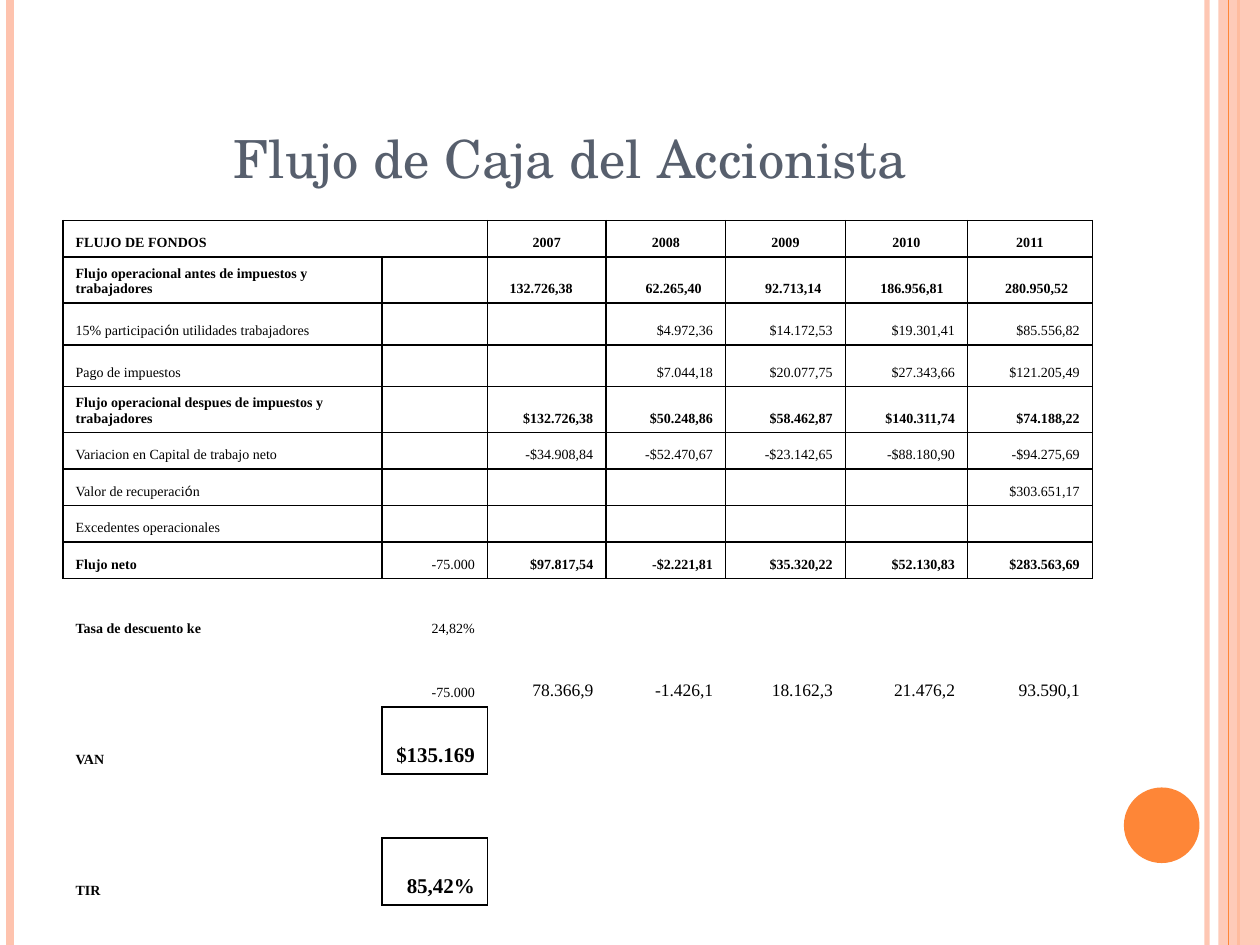
"""Build the shareholder cash flow slide with its table and side decoration."""
from dataclasses import dataclass

from lxml import etree
from pptx import Presentation
from pptx.dml.color import RGBColor
from pptx.enum.shapes import MSO_CONNECTOR, MSO_SHAPE
from pptx.enum.text import MSO_ANCHOR, PP_ALIGN
from pptx.oxml.ns import qn
from pptx.util import Inches, Pt

STRAIGHT = MSO_CONNECTOR.STRAIGHT
RECTANGLE, OVAL = MSO_SHAPE.RECTANGLE, MSO_SHAPE.OVAL
BOTTOM = MSO_ANCHOR.BOTTOM
LEFT, CENTER, RIGHT = PP_ALIGN.LEFT, PP_ALIGN.CENTER, PP_ALIGN.RIGHT

PEACH = RGBColor(0xFE, 0xC3, 0xAE)
ORANGE = RGBColor(0xFE, 0x86, 0x37)
SLATE = RGBColor(0x57, 0x5F, 0x6D)
BLACK = RGBColor(0, 0, 0)
TITLE_FONT, TABLE_FONT, ACCENT_FONT = "TeX Gyre Schola", "Times New Roman", "Arial"

SLIDE_WIDTH, SLIDE_HEIGHT = 10, 7.5
CONTENT_LEFT, CONTENT_WIDTH = 0.05 * SLIDE_WIDTH, 0.817 * SLIDE_WIDTH
TABLE_TOP = 1.75
COLUMN_WIDTHS = (2.53, 0.84, 0.94, 0.95, 0.95, 0.97, 0.99)
LINE_ROW, WRAPPED_ROW, SPACED_ROW, RESULT_ROW = 0.29, 0.35, 0.51, 0.53
GRID_ROWS = 9
BORDER_SIDES = {"L": (0, -1), "R": (0, 1), "T": (-1, 0), "B": (1, 0)}


@dataclass(frozen=True)
class Rule:
    """A full-height vertical line."""
    x: float
    color: RGBColor
    width: float
    opacity: int = 100


@dataclass(frozen=True)
class Row:
    """A table row: label, initial value and yearly values."""
    height: float
    label: str = ""
    initial: str = ""
    years: tuple[str, ...] = ()
    bold: bool = False
    size: float = 8
    result: bool = False
    alignments: tuple = (RIGHT,) * 5
    inset: float = 0.1


BACK_RULES = (Rule(9.58, PEACH, 3, 93), Rule(0.08, PEACH, 4.5), Rule(9.83, ORANGE, 1.5))
FRONT_RULE = Rule(9.75, ORANGE, 0.75)

ROWS = (
    Row(LINE_ROW, "FLUJO DE FONDOS", years=("2007", "2008", "2009", "2010", "2011"),
        bold=True, alignments=(CENTER,) * 5),
    Row(WRAPPED_ROW, "Flujo operacional antes de impuestos y trabajadores",
        years=("132.726,38", "62.265,40", "92.713,14", "186.956,81", "280.950,52"),
        bold=True, alignments=(CENTER,) + (RIGHT,) * 4, inset=0.19),
    Row(0.33, "15% participación utilidades trabajadores",
        years=("", "$4.972,36", "$14.172,53", "$19.301,41", "$85.556,82")),
    Row(0.33, "Pago de impuestos",
        years=("", "$7.044,18", "$20.077,75", "$27.343,66", "$121.205,49")),
    Row(WRAPPED_ROW, "Flujo operacional despues de impuestos y trabajadores",
        years=("$132.726,38", "$50.248,86", "$58.462,87", "$140.311,74", "$74.188,22"), bold=True),
    Row(LINE_ROW, "Variacion en Capital de trabajo neto",
        years=("-$34.908,84", "-$52.470,67", "-$23.142,65", "-$88.180,90", "-$94.275,69")),
    Row(LINE_ROW, "Valor de recuperación", years=("", "", "", "", "$303.651,17")),
    Row(LINE_ROW, "Excedentes operacionales"),
    Row(LINE_ROW, "Flujo neto", "-75.000",
        ("$97.817,54", "-$2.221,81", "$35.320,22", "$52.130,83", "$283.563,69"), bold=True),
    Row(SPACED_ROW, "Tasa de descuento ke", "24,82%", bold=True),
    Row(SPACED_ROW, initial="-75.000",
        years=("78.366,9", "-1.426,1", "18.162,3", "21.476,2", "93.590,1"), size=10),
    Row(RESULT_ROW, "VAN", "$135.169", bold=True, result=True),
    Row(SPACED_ROW),
    Row(RESULT_ROW, "TIR", "85,42%", bold=True, result=True),
)


def set_opacity(properties, opacity: int) -> None:
    """Give the solid colour below the properties an opacity in percent."""
    color = next(properties.iter(qn("a:srgbClr")))
    etree.SubElement(color, qn("a:alpha"), val=str(opacity * 1000))


def add_rule(slide, rule: Rule) -> None:
    """Draw a vertical line over the height of the slide."""
    x = Inches(rule.x)
    connector = slide.shapes.add_connector(STRAIGHT, x, 0, x, Inches(SLIDE_HEIGHT))
    connector.line.color.rgb = rule.color
    connector.line.width = Pt(rule.width)
    if rule.opacity < 100:
        set_opacity(connector.line._ln, rule.opacity)
    etree.SubElement(connector._element.spPr, qn("a:effectLst"))


def add_plain_shape(slide, kind, box: tuple[float, ...], color: RGBColor):
    """Draw a filled shape without an outline."""
    shape = slide.shapes.add_shape(kind, *map(Inches, box))
    shape.shadow.inherit = False
    shape.fill.solid()
    shape.fill.fore_color.rgb = color
    shape.line.fill.background()
    return shape


def add_run(paragraph, text: str, size: float, bold: bool, font: str, color: RGBColor) -> None:
    """Append a formatted run."""
    run = paragraph.add_run()
    run.text = text
    run.font.size = Pt(size)
    run.font.bold = bold
    run.font.name = font
    run.font.color.rgb = color


def add_title(slide, text: str) -> None:
    """Add the title text box."""
    box = (CONTENT_LEFT, 0.04 * SLIDE_HEIGHT, CONTENT_WIDTH, SLIDE_HEIGHT / 6)
    frame = slide.shapes.add_textbox(*map(Inches, box)).text_frame
    frame.word_wrap = True
    frame.vertical_anchor = BOTTOM
    paragraph = frame.paragraphs[0]
    paragraph.alignment = CENTER
    add_run(paragraph, text, 30, False, TITLE_FONT, SLATE)


def is_boxed(row: int, column: int) -> bool:
    """Tell whether a cell has a border on its sides."""
    if not (0 <= row < len(ROWS) and 0 <= column < len(COLUMN_WIDTHS)):
        return False
    return row < GRID_ROWS or (ROWS[row].result and column == 1)


def set_borders(cell, row: int, column: int) -> None:
    """Draw the cell edges that touch a boxed cell, leaving the heading undivided."""
    properties = cell._tc.get_or_add_tcPr()
    for index, (side, (down, across)) in enumerate(BORDER_SIDES.items()):
        line = etree.Element(qn(f"a:ln{side}"), w=str(Pt(1)))
        undivided = row == 0 and (column, side) in ((0, "R"), (1, "L"))
        visible = is_boxed(row, column) or is_boxed(row + down, column + across)
        if visible and not undivided:
            fill = etree.SubElement(line, qn("a:solidFill"))
            etree.SubElement(fill, qn("a:srgbClr"), val=str(BLACK))
        else:
            etree.SubElement(line, qn("a:noFill"))
        properties.insert(index, line)


def write_cell(cell, text: str, alignment, size: float, bold: bool) -> None:
    """Write the cell text, with accented letters in their own font."""
    cell.fill.background()
    cell.vertical_anchor = BOTTOM
    paragraph = cell.text_frame.paragraphs[0]
    paragraph.alignment = alignment
    before, accent, after = text.partition("ó")
    for part, font in ((before, TABLE_FONT), (accent, ACCENT_FONT), (after, TABLE_FONT)):
        if part:
            add_run(paragraph, part, size, bold, font, BLACK)
    if not text:
        etree.SubElement(paragraph._p, qn("a:endParaRPr"), sz=str(int(size * 100)))


def add_cash_flow_table(slide) -> None:
    """Add the cash flow table."""
    height = sum(row.height for row in ROWS)
    box = (CONTENT_LEFT, TABLE_TOP, CONTENT_WIDTH, height)
    table = slide.shapes.add_table(len(ROWS), len(COLUMN_WIDTHS), *map(Inches, box)).table
    table.first_row = table.horz_banding = False
    for column, width in zip(table.columns, COLUMN_WIDTHS):
        column.width = Inches(width)
    for row_index, row in enumerate(ROWS):
        table.rows[row_index].height = Inches(row.height)
        texts = (row.label, row.initial) + (row.years or ("",) * 5)
        for column, (text, alignment) in enumerate(zip(texts, (LEFT, RIGHT) + row.alignments)):
            cell = table.cell(row_index, column)
            size = 12 if row.result and column == 1 else row.size if column > 1 else 8
            write_cell(cell, text, alignment, size, row.bold and (column != 1 or row.result))
            if column > 1:
                cell.margin_right = Inches(row.inset)
            set_borders(cell, row_index, column)


def main() -> None:
    """Build and save the presentation."""
    presentation = Presentation()
    presentation.slide_width = Inches(SLIDE_WIDTH)
    presentation.slide_height = Inches(SLIDE_HEIGHT)
    slide = presentation.slides.add_slide(presentation.slide_layouts[6])
    for rule in BACK_RULES:
        add_rule(slide, rule)
    band = add_plain_shape(slide, RECTANGLE, (9.67, 0, 0.33, SLIDE_HEIGHT), PEACH)
    set_opacity(band._element.spPr, 87)
    add_rule(slide, FRONT_RULE)
    add_plain_shape(slide, OVAL, (8.92, 6.25, 0.6, 0.6), ORANGE)
    add_title(slide, "Flujo de Caja del Accionista ")
    add_cash_flow_table(slide)
    presentation.save("out.pptx")


if __name__ == "__main__":
    main()
